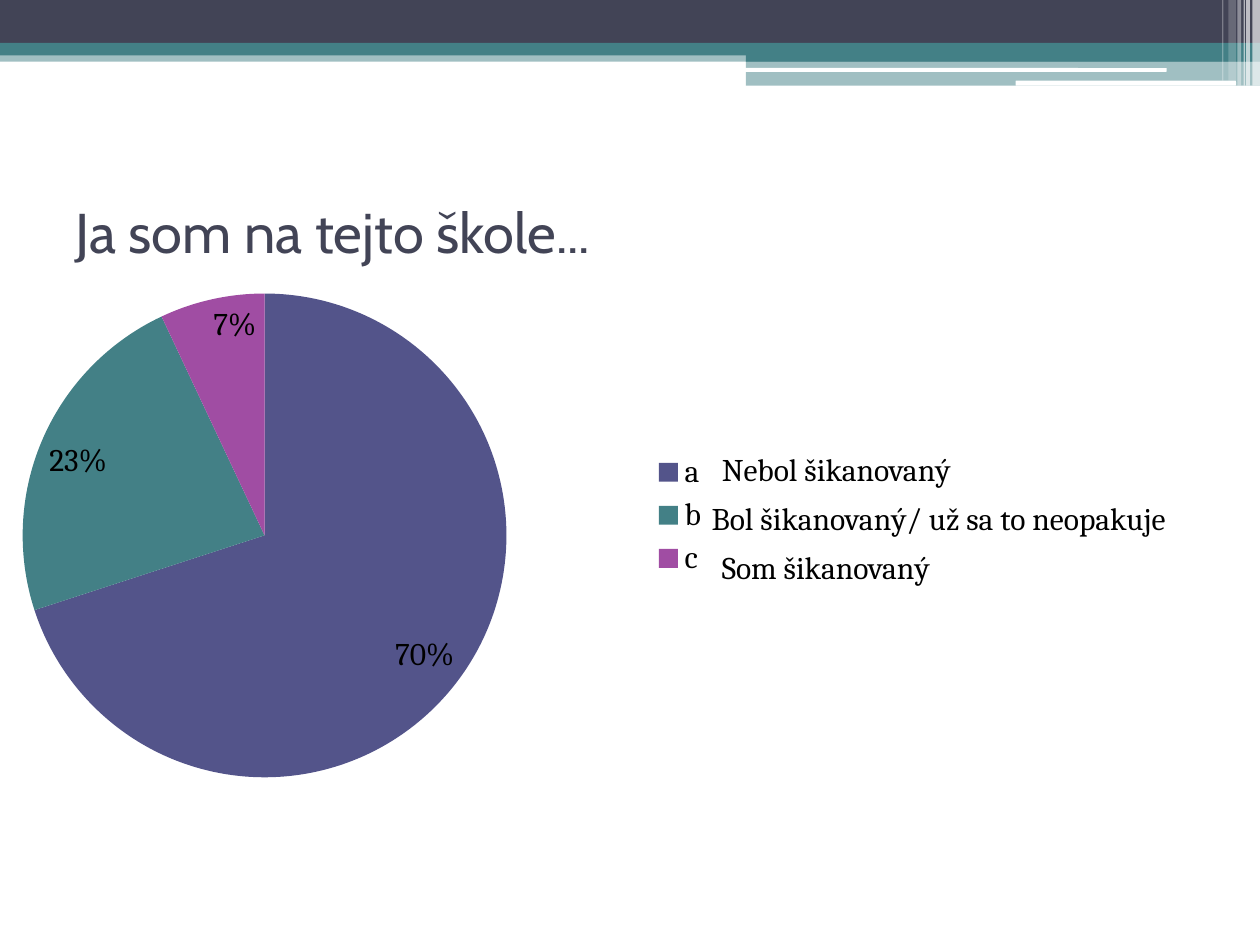
import pptx
import pptx.chart.data
import pptx.dml.color
import pptx.enum.chart
import pptx.enum.shapes
import pptx.enum.text
import pptx.oxml
import pptx.oxml.ns
import pptx.util
from lxml import etree

# Content
TITLE = "Ja som na tejto škole..."
INK, TEAL, WHITE, BLACK = "424456", "438086", "FFFFFF", "000000"
SLICES = [("a", 70, "53548A"), ("b", 23, TEAL), ("c", 7, "A04DA3")]
ANSWERS = [
    ("Nebol šikanovaný", 5.63, 2.05),
    ("Bol šikanovaný/ už sa to neopakuje", 5.55, 3.83),
    ("Som šikanovaný", 5.63, 1.91),
]
ANSWER_TOP, ANSWER_STEP, ANSWER_HEIGHT = 3.52, 0.39, 0.4

# Header bands: left, top, width, height, colour, opacity in percent
WIDTH, HEIGHT, STEP_LEFT = 10, 7.5, 5.92
BANDS = [
    (0, 0.4, WIDTH, 0.09, TEAL, 50),
    (0, 0, WIDTH, 0.34, INK, 100),
    (0, 0.34, WIDTH, 0.1, TEAL, 100),
    (STEP_LEFT, 0.39, WIDTH - STEP_LEFT, 0.1, TEAL, 100),
    (STEP_LEFT, 0.48, WIDTH - STEP_LEFT, 0.2, TEAL, 50),
]
ROUNDED_LINES = [(5.91, 0.54, 3.35, 0.03), (8.06, 0.64, 1.75, 0.04)]
# Stripes at the right edge: left, width, height, opacity in percent
STRIPES = [
    (9.94, 0.06, 0.68, 65), (9.89, 0.03, 0.68, 65), (9.87, 0.01, 0.68, 60),
    (9.82, 0.03, 0.68, 40), (9.75, 0.06, 0.64, 20), (9.7, 0.01, 0.64, 30),
]

# Chart frame, and the pie's place on the slide
FRAME = (-0.94, 1.87, 6.67, 4.44)
PIE = (0.18, 2.33, 3.84, 3.84)


def colour(code):
    return pptx.dml.color.RGBColor.from_string(code)


def inches(*lengths):
    return [pptx.util.Inches(length) for length in lengths]


def style_font(font, name, size, code):
    font.name = name
    font.size = pptx.util.Pt(size)
    font.color.rgb = colour(code)


def add_band(slide, place, code, opacity=100, rounded=False):
    kinds = pptx.enum.shapes.MSO_SHAPE
    kind = kinds.ROUNDED_RECTANGLE if rounded else kinds.RECTANGLE
    band = slide.shapes.add_shape(kind, *inches(*place))
    band.shadow.inherit = False
    band.line.fill.background()
    band.fill.solid()
    band.fill.fore_color.rgb = colour(code)
    if opacity < 100:
        tint = band.fill._xPr.find(".//" + pptx.oxml.ns.qn("a:srgbClr"))
        etree.SubElement(tint, pptx.oxml.ns.qn("a:alpha"), val=str(opacity * 1000))


def add_pie(slide):
    data = pptx.chart.data.CategoryChartData()
    data.categories = [name for name, value, code in SLICES]
    data.add_series("Series 1", [value for name, value, code in SLICES])
    kind = pptx.enum.chart.XL_CHART_TYPE.PIE
    chart = slide.shapes.add_chart(kind, *inches(*FRAME), data).chart
    style_font(chart.font, "Cambria", 18, BLACK)
    chart.has_title = False
    chart.has_legend = True
    chart.legend.position = pptx.enum.chart.XL_LEGEND_POSITION.RIGHT
    chart.legend.include_in_layout = False

    plot = chart.plots[0]
    plot.vary_by_categories = True
    for index, (name, value, code) in enumerate(SLICES):
        point = plot.series[0].points[index].format
        point.fill.solid()
        point.fill.fore_color.rgb = colour(code)
        point.line.fill.background()

    plot.has_data_labels = True
    labels = plot.data_labels
    labels.show_percentage = True
    labels.show_value = False
    labels.number_format = "0%"
    labels.number_format_is_linked = False
    labels.position = pptx.enum.chart.XL_LABEL_POSITION.INSIDE_END
    style_font(labels.font, "Cambria", 18, BLACK)

    # Fixed place of the pie, as shares of the frame
    area = chart._chartSpace.find(".//" + pptx.oxml.ns.qn("c:plotArea"))
    for old in area.findall(pptx.oxml.ns.qn("c:layout")):
        area.remove(old)
    left, top, width, height = FRAME
    settings = [
        ("layoutTarget", "inner"), ("xMode", "edge"), ("yMode", "edge"),
        ("x", (PIE[0] - left) / width), ("y", (PIE[1] - top) / height),
        ("w", PIE[2] / width), ("h", PIE[3] / height),
    ]
    layout = etree.Element(pptx.oxml.ns.qn("c:layout"))
    manual = etree.SubElement(layout, pptx.oxml.ns.qn("c:manualLayout"))
    for tag, value in settings:
        etree.SubElement(manual, pptx.oxml.ns.qn("c:" + tag), val=str(value))
    area.insert(0, layout)


def add_text(frame, text, name, size, code):
    para = frame.paragraphs[0]
    para.alignment = pptx.enum.text.PP_ALIGN.LEFT
    span = para.add_run()
    span.text = text
    style_font(span.font, name, size, code)


def main():
    deck = pptx.Presentation()
    deck.slide_width, deck.slide_height = inches(WIDTH, HEIGHT)
    slide = deck.slides.add_slide(deck.slide_layouts[5])

    # Header
    for *place, code, opacity in BANDS:
        add_band(slide, place, code, opacity)
    for place in ROUNDED_LINES:
        add_band(slide, place, WHITE, rounded=True)
    for left, width, height, opacity in STRIPES:
        add_band(slide, (left, 0, width, height), WHITE, opacity)

    # Title
    title = slide.shapes.title
    title.left, title.top, title.width, title.height = inches(0.5, 1.25, 9, 1.17)
    title.text_frame.vertical_anchor = pptx.enum.text.MSO_ANCHOR.MIDDLE
    add_text(title.text_frame, TITLE, "Cabin", 32, INK)

    # Pie and the answers beside its legend
    add_pie(slide)
    for row, (text, left, width) in enumerate(ANSWERS):
        top = ANSWER_TOP + row * ANSWER_STEP
        box = slide.shapes.add_textbox(*inches(left, top, width, ANSWER_HEIGHT))
        box.text_frame.word_wrap = False
        box.text_frame.auto_size = pptx.enum.text.MSO_AUTO_SIZE.SHAPE_TO_FIT_TEXT
        add_text(box.text_frame, text, "Cambria", 18, BLACK)

    deck.save("out.pptx")


if __name__ == "__main__":
    main()
